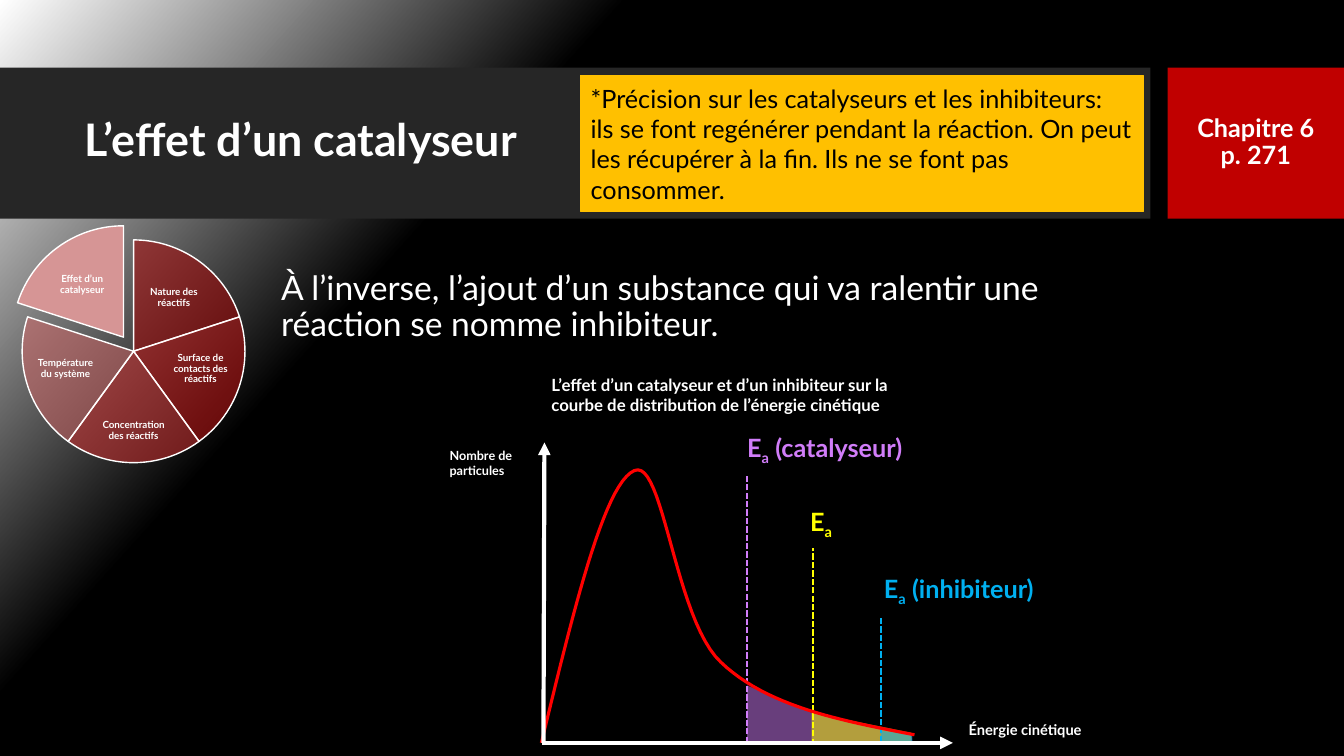
from lxml.etree import SubElement
from pptx import Presentation
from pptx.dml.color import RGBColor
from pptx.enum.dml import MSO_LINE
from pptx.enum.shapes import MSO_CONNECTOR, MSO_SHAPE
from pptx.enum.text import MSO_ANCHOR, PP_ALIGN
from pptx.oxml.ns import qn
from pptx.util import Inches, Pt

COLORS = {
    "white": "FFFFFF", "black": "000000", "band": "262626", "chapter": "C00000",
    "note": "FFC000", "catalyst": "D17DF9", "plain": "FFFF00",
    "inhibitor": "00B0F0", "curve": "FF0000",
    "nature": "AE0000", "surface": "CE1010", "concentration": "DD3030",
    "temperature": "D66666", "effect": "D69595",
}
# Label, colour, opacity, offset of the slice, label box within the slice's circle
SLICES = [
    ("Nature des réactifs", "nature", 50, (0, 0), (1.13, 0.32, 0.75, 0.51)),
    ("Surface de contacts des réactifs", "surface", 50, (0, 0), (1.44, 1, 0.66, 0.56)),
    ("Concentration des réactifs", "concentration", 50, (0, 0), (0.71, 1.66, 0.79, 0.47)),
    ("Température du système", "temperature", 50, (0, 0), (0.1, 1, 0.66, 0.56)),
    ("Effet d’un catalyseur", "effect", 100, (-0.1, -0.14), (0.32, 0.33, 0.75, 0.51)),
]
# Colour and outline, in inches right of and above the graph's origin
AREAS = [
    ("catalyst", [(2.03, 0.57), (2.03, -0.01), (3.67, -0.01), (3.66, 0.08), (2.67, 0.3)]),
    ("plain", [(2.67, 0.3), (2.67, 0.01), (3.66, 0), (3.66, 0.1)]),
    ("inhibitor", [(3.36, 0.12), (3.35, -0.01), (3.67, -0.02), (3.67, 0.08)]),
]
CURVE_START = (-0.01, 0)
CURVE = [
    ((0.3, 1.28), (0.61, 2.57), (0.91, 2.7)),
    ((1.2, 2.84), (1.31, 1.23), (1.77, 0.8)),
    ((2.23, 0.36), (2.96, 0.22), (3.69, 0.08)),
]
# Colour, horizontal place, foot, top, text after the symbol, label width
THRESHOLDS = [
    ("catalyst", 2.03, 0, 2.66, " (catalyseur)", 1.9),
    ("plain", 2.68, -0.02, 1.93, "", 0.53),
    ("inhibitor", 3.36, 0.01, 1.26, " (inhibiteur)", 1.9),
]


def rgb(name):
    return RGBColor.from_string(COLORS[name])


def paint(shape, fill, opacity=100, line=None):
    shape.shadow.inherit = False
    shape.fill.solid()
    shape.fill.fore_color.rgb = rgb(fill)
    if opacity < 100:
        color = shape.fill._xPr.find(".//" + qn("a:srgbClr"))
        SubElement(color, qn("a:alpha")).set("val", str(opacity * 1000))
    if line:
        shape.line.color.rgb = rgb(line)
        shape.line.width = Pt(1)
    else:
        shape.line.fill.background()


def add_box(slide, kind, box, fill, opacity=100, line=None):
    shape = slide.shapes.add_shape(kind, *map(Inches, box))
    paint(shape, fill, opacity, line)
    return shape


def write(shape, paragraphs, size, color="white", bold=True, align=PP_ALIGN.LEFT,
          anchor=MSO_ANCHOR.MIDDLE, spacing=None, inset=None):
    """Fill a shape with paragraphs, each given as a list of runs."""
    frame = shape.text_frame
    frame.word_wrap = True
    frame.vertical_anchor = anchor
    if inset is not None:
        frame.margin_left = frame.margin_right = Inches(inset)
        frame.margin_top = frame.margin_bottom = Inches(inset)
    for index, runs in enumerate(paragraphs):
        para = frame.add_paragraph() if index else frame.paragraphs[0]
        for text in runs:
            para.add_run().text = text
        para.alignment = align
        if spacing:
            para.line_spacing = spacing
        para.font.name = "Lato"
        para.font.size = Pt(size)
        para.font.bold = bold
        para.font.color.rgb = rgb(color)
    return frame


def add_text(slide, box, paragraphs, size, **style):
    return write(slide.shapes.add_textbox(*map(Inches, box)), paragraphs, size, **style)


def add_line(slide, start, end, color, width, dashed=False, arrow=False):
    line = slide.shapes.add_connector(MSO_CONNECTOR.STRAIGHT, *map(Inches, start + end))
    line.line.color.rgb = rgb(color)
    line.line.width = Pt(width)
    if dashed:
        line.line.dash_style = MSO_LINE.SQUARE_DOT
    if arrow:
        SubElement(line.line._get_or_add_ln(), qn("a:tailEnd")).set("type", "triangle")
    SubElement(line._element.spPr, qn("a:effectLst"))


def add_outline(slide, points, close):
    corners = [(Inches(x), Inches(y)) for x, y in points]
    builder = slide.shapes.build_freeform(*corners[0])
    builder.add_line_segments(corners[1:], close=close)
    return builder.convert_to_shape()


def bezier(start, first, second, end, steps=24):
    """Points along a cubic curve, without its start."""
    for step in range(1, steps + 1):
        t = step / steps
        weights = ((1 - t) ** 3, 3 * t * (1 - t) ** 2, 3 * t * t * (1 - t), t ** 3)
        yield tuple(sum(weight * point[axis] for weight, point
                        in zip(weights, (start, first, second, end))) for axis in (0, 1))


def fill_background(slide):
    fill = slide.background.fill
    fill.gradient()
    fill.gradient_angle = 360 - 42
    for stop, color, position in zip(fill.gradient_stops, ("white", "black"), (0, 0.31)):
        stop.color.rgb = rgb(color)
        stop.position = position


def add_header(slide, left, top):
    height = 1.5
    add_box(slide, MSO_SHAPE.RECTANGLE, (left, top, 11.41, height), "band")
    add_text(slide, (left + 0.74, top + 0.15, 10.51, 1.18),
             [["L’effet d’un catalyseur"]], 32, spacing=0.9)
    chapter = add_box(slide, MSO_SHAPE.RECTANGLE, (left + 11.58, top, 1.75, height), "chapter")
    write(chapter, [["Chapitre 6"], ["p. 271"]], 18, align=PP_ALIGN.CENTER, spacing=0.9)
    note = add_box(slide, MSO_SHAPE.RECTANGLE, (left + 5.76, top + 0.08, 5.58, 1.35),
                   "note", line="note")
    write(note, [["*Précision sur les catalyseurs et les inhibiteurs:"],
                 ["ils se font regénérer pendant la réaction. On peut les récupérer "
                  "à la fin. Ils ne se font pas consommer."]],
          18, color="black", bold=False)


def add_factor_wheel(slide, left, top, size):
    full_turn, first_angle = 216, 162  # adjustments count 216 to a full turn
    sweep = full_turn / len(SLICES)
    for index, (label, color, opacity, (dx, dy), (x, y, width, height)) in enumerate(SLICES):
        pie = add_box(slide, MSO_SHAPE.PIE, (left + dx, top + dy, size, size),
                      color, opacity, "white")
        pie.adjustments[0] = (first_angle + index * sweep) % full_turn
        pie.adjustments[1] = (first_angle + (index + 1) * sweep) % full_turn
        add_text(slide, (left + dx + x, top + dy + y, width, height), [[label]], 7,
                 align=PP_ALIGN.CENTER, spacing=0.9, inset=0.01)


def add_energy_graph(slide, left, bottom):
    """Draw the distribution curve with its origin at the given point."""
    def place(point):
        return left + point[0], bottom - point[1]

    for color, points in AREAS:
        paint(add_outline(slide, map(place, points), True), color, 50)

    for color, x, foot, top, suffix, width in THRESHOLDS:
        add_line(slide, place((x, foot)), place((x, top)), color, 1.5, dashed=True)
        runs = ["E", "a", suffix] if suffix else ["E", "a"]
        frame = add_text(slide, (*place((x - 0.18, top + 0.47)), width, 0.4), [runs], 18,
                         color=color, align=PP_ALIGN.CENTER, anchor=MSO_ANCHOR.TOP)
        frame.paragraphs[0].runs[1].font._element.set("baseline", "-25000")

    points = [CURVE_START]
    for segment in CURVE:
        points.extend(bezier(points[-1], *segment))
    curve = add_outline(slide, map(place, points), False)
    curve.shadow.inherit = False
    curve.fill.background()
    curve.line.color.rgb = rgb("curve")
    curve.line.width = Pt(2.25)

    for start, end in (((0.01, 0), (0.02, 2.98)), ((0, 0), (4.07, 0))):
        add_line(slide, place(start), place(end), "white", 3, arrow=True)
    for x, y, width, height, size, text in (
            (-0.01, 3.7, 4.08, 0.5, 12, "L’effet d’un catalyseur et d’un inhibiteur sur la "
             "courbe de distribution de l’énergie cinétique"),
            (-1.02, 2.98, 1.01, 0.4, 9, "Nombre de particules"),
            (4.13, 0.27, 1.54, 0.28, 10.5, "Énergie cinétique")):
        add_text(slide, (*place((x, y)), width, height), [[text]], size, anchor=MSO_ANCHOR.TOP)


def main():
    deck = Presentation()
    deck.slide_width, deck.slide_height = Inches(13.33), Inches(7.5)
    slide = deck.slides.add_slide(deck.slide_layouts[6])
    fill_background(slide)
    add_header(slide, 0, 0.67)
    add_factor_wheel(slide, 0.22, 2.38, 2.21)
    add_text(slide, (2.69, 2.35, 8.56, 1.4),
             [["À l’inverse, l’ajout d’un substance qui va ralentir une réaction "
               "se nomme inhibiteur."]], 24, bold=False, spacing=0.9)
    add_energy_graph(slide, 5.38, 7.37)
    deck.save("out.pptx")


if __name__ == "__main__":
    main()
